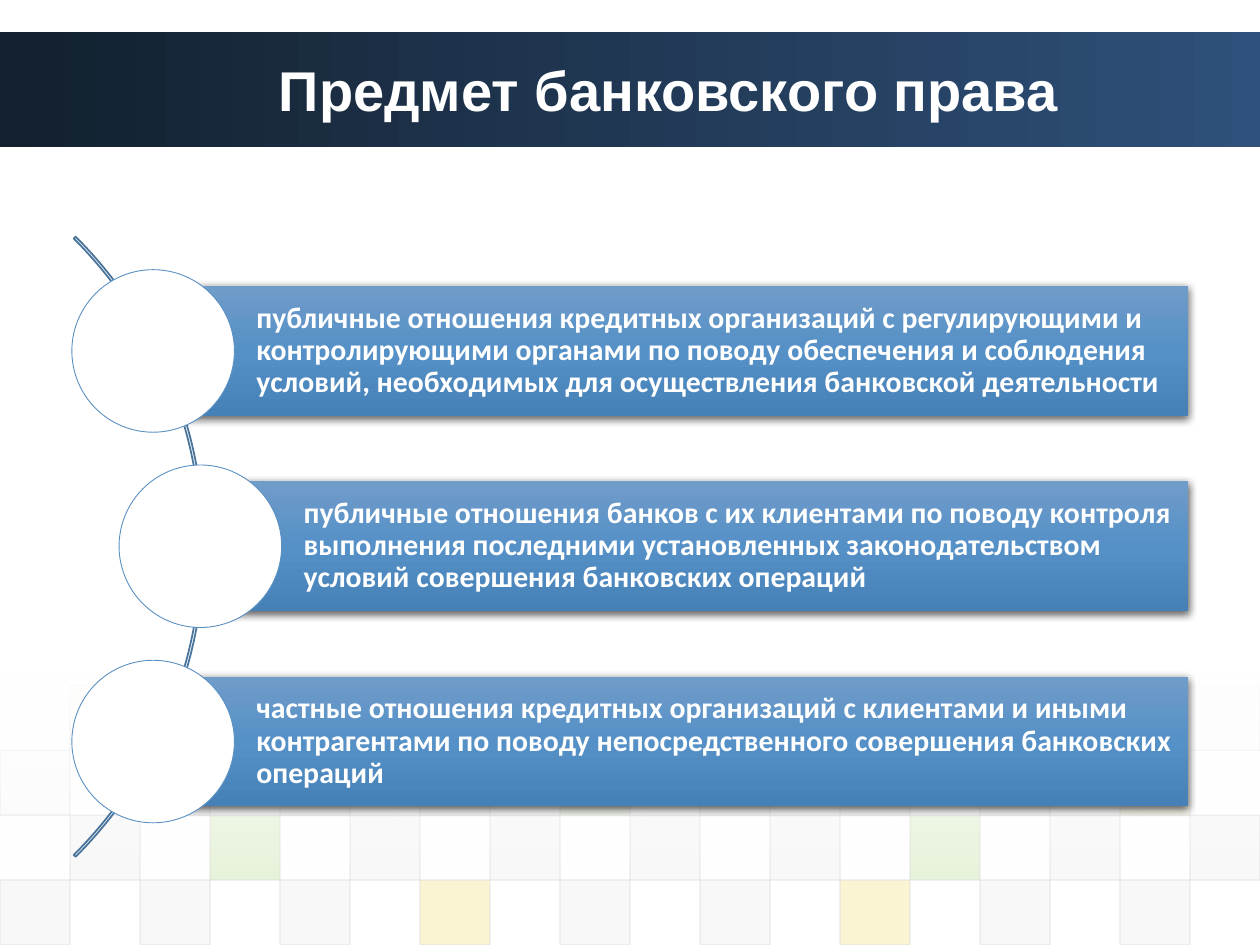
from lxml.etree import SubElement
from pptx import Presentation
from pptx.dml.color import RGBColor
from pptx.enum.shapes import MSO_SHAPE
from pptx.enum.text import MSO_ANCHOR, PP_ALIGN
from pptx.oxml.ns import qn
from pptx.util import Inches, Pt

TITLE = "Предмет банковского права "
RELATIONS = [
    "публичные отношения кредитных организаций с регулирующими и контролирующими "
    "органами по поводу обеспечения и соблюдения условий, необходимых для "
    "осуществления банковской деятельности",
    "публичные отношения банков с их клиентами по поводу контроля выполнения "
    "последними установленных законодательством условий совершения банковских операций",
    "частные отношения кредитных организаций с клиентами и иными контрагентами "
    "по поводу непосредственного совершения банковских операций",
]
# Checkerboard rows: first column, opacity in percent, tile colour keys
MOSAIC = [(1, 5, "YLLYDYLGL"), (0, 10, "DDDDGDDDY"),
          (1, 20, "DGDDDDGDD"), (0, 20, "DDDYDDYDD")]

THEME = {
    "tiles": {"D": "DDDDDD", "L": "EAEAEA", "G": "8AC246", "Y": "EFC821"},
    "tile_edge": "DDDDDD",
    "header": [(0, "13202E", 100), (100, "2E507A", 100)],
    "veil": [(0, "FFFFFF", 90), (100, "FFFFFF", 0)],
    "bar": [(0, "709CC9", 100), (50, "5590C7", 100), (100, "4580B7", 100)],
    "arc": "48739B",
    "ring": "5A90C2",
    "white": "FFFFFF",
    "title_font": {"name": "Arial", "size": Pt(32), "bold": True},
    "bar_font": {"name": "Calibri", "size": Pt(17), "bold": True},
}

WIDTH, HEIGHT = 10, 7.5
HEADER_TOP, HEADER_HEIGHT = 0.25, 0.92
COLUMN, ROW = WIDTH / 18, 0.515
MOSAIC_TOP = HEIGHT - len(MOSAIC) * ROW
CIRCLE, CIRCLE_LEFT, CIRCLE_TOP, STEP = 1.29, 0.57, 2.14, 1.55
BAR_HEIGHT, BAR_RIGHT = 1.03, 9.43
MIDDLE_INDENT = 0.375
ARC_LEFT, ARC_TOP, ARC_SIZE = -5.34, 0.86, 6.96


def set_alpha(color, percent):
    SubElement(color, qn("a:alpha"), val=str(percent * 1000))


def add_outline(slide, preset, box, line=None, width=1):
    """Add an unfilled shape without shadow, edged only if a line colour is given."""
    shape = slide.shapes.add_shape(preset, *map(Inches, box))
    shape.shadow.inherit = False
    shape.fill.background()
    if line:
        shape.line.color.rgb = RGBColor.from_string(line)
        shape.line.width = Pt(width)
    else:
        shape.line.fill.background()
    return shape


def fill_solid(shape, color):
    shape.fill.solid()
    shape.fill.fore_color.rgb = RGBColor.from_string(color)


def fill_gradient(shape, stops, angle):
    """Fill with (position, colour, opacity) stops, angle clockwise in degrees."""
    shape.fill.gradient()
    gradient = shape._element.spPr.find(qn("a:gradFill"))
    stop_list = gradient.find(qn("a:gsLst"))
    for default_stop in list(stop_list):
        stop_list.remove(default_stop)
    for position, color, opacity in stops:
        stop = SubElement(stop_list, qn("a:gs"), pos=str(position * 1000))
        set_alpha(SubElement(stop, qn("a:srgbClr"), val=color), opacity)
    gradient.find(qn("a:lin")).set("ang", str(angle * 60000))


def drop_shadow(shape):
    effects = shape._element.spPr.find(qn("a:effectLst"))
    shadow = SubElement(effects, qn("a:outerShdw"), blurRad=str(Pt(4.5)),
                        dist=str(Pt(1.5)), dir="5400000", rotWithShape="0")
    set_alpha(SubElement(shadow, qn("a:srgbClr"), val="000000"), 63)


def write(shape, text, font, align, insets=(0.1, 0.05, 0.1, 0.05), spacing=1.0):
    frame = shape.text_frame
    left, top, right, bottom = map(Inches, insets)
    frame_format = {"word_wrap": True, "vertical_anchor": MSO_ANCHOR.MIDDLE,
                    "margin_left": left, "margin_top": top,
                    "margin_right": right, "margin_bottom": bottom}
    for attribute, value in frame_format.items():
        setattr(frame, attribute, value)
    paragraph = frame.paragraphs[0]
    paragraph.alignment, paragraph.line_spacing = align, spacing
    run = paragraph.add_run()
    run.text = text
    for attribute, value in font.items():
        setattr(run.font, attribute, value)
    run.font.color.rgb = RGBColor.from_string(THEME["white"])


def draw_background(slide):
    header = add_outline(slide, MSO_SHAPE.RECTANGLE,
                         (0, HEADER_TOP, WIDTH, HEADER_HEIGHT))
    fill_gradient(header, THEME["header"], 0)
    for row, (first, opacity, keys) in enumerate(MOSAIC):
        for position, key in enumerate(keys):
            box = ((first + 2 * position) * COLUMN, MOSAIC_TOP + row * ROW, COLUMN, ROW)
            tile = add_outline(slide, MSO_SHAPE.RECTANGLE, box, THEME["tile_edge"], 0.75)
            fill_solid(tile, THEME["tiles"][key])
            fill_color, edge_color = tile._element.spPr.iter(qn("a:srgbClr"))
            set_alpha(fill_color, opacity)
            set_alpha(edge_color, 60)
    veil = add_outline(slide, MSO_SHAPE.RECTANGLE, (0, 5.37, WIDTH, 1.62))
    fill_gradient(veil, THEME["veil"], 90)


def draw_relations(slide):
    arc = add_outline(slide, MSO_SHAPE.BLOCK_ARC,
                      (ARC_LEFT, ARC_TOP, ARC_SIZE, ARC_SIZE), THEME["arc"])
    for index, value in enumerate((189, 27, 0.003)):
        arc.adjustments[index] = value
    for index, relation in enumerate(RELATIONS):
        left = CIRCLE_LEFT + MIDDLE_INDENT * (index % 2)
        top = CIRCLE_TOP + index * STEP
        bar_left = left + CIRCLE / 2
        bar = add_outline(slide, MSO_SHAPE.RECTANGLE,
                          (bar_left, top + (CIRCLE - BAR_HEIGHT) / 2,
                           BAR_RIGHT - bar_left, BAR_HEIGHT))
        fill_gradient(bar, THEME["bar"], 90)
        drop_shadow(bar)
        write(bar, relation, THEME["bar_font"], PP_ALIGN.LEFT,
              (0.82, 0.05, 0.05, 0.05), 0.9)
        circle = add_outline(slide, MSO_SHAPE.OVAL, (left, top, CIRCLE, CIRCLE),
                             THEME["ring"], 0.5)
        fill_solid(circle, THEME["white"])


def main():
    deck = Presentation()
    deck.slide_width, deck.slide_height = Inches(WIDTH), Inches(HEIGHT)
    slide = deck.slides.add_slide(deck.slide_layouts[6])
    draw_background(slide)
    heading = slide.shapes.add_textbox(
        *map(Inches, (1.33, HEADER_TOP, 8.08, HEADER_HEIGHT)))
    write(heading, TITLE, THEME["title_font"], PP_ALIGN.CENTER)
    draw_relations(slide)
    deck.save("out.pptx")


if __name__ == "__main__":
    main()
